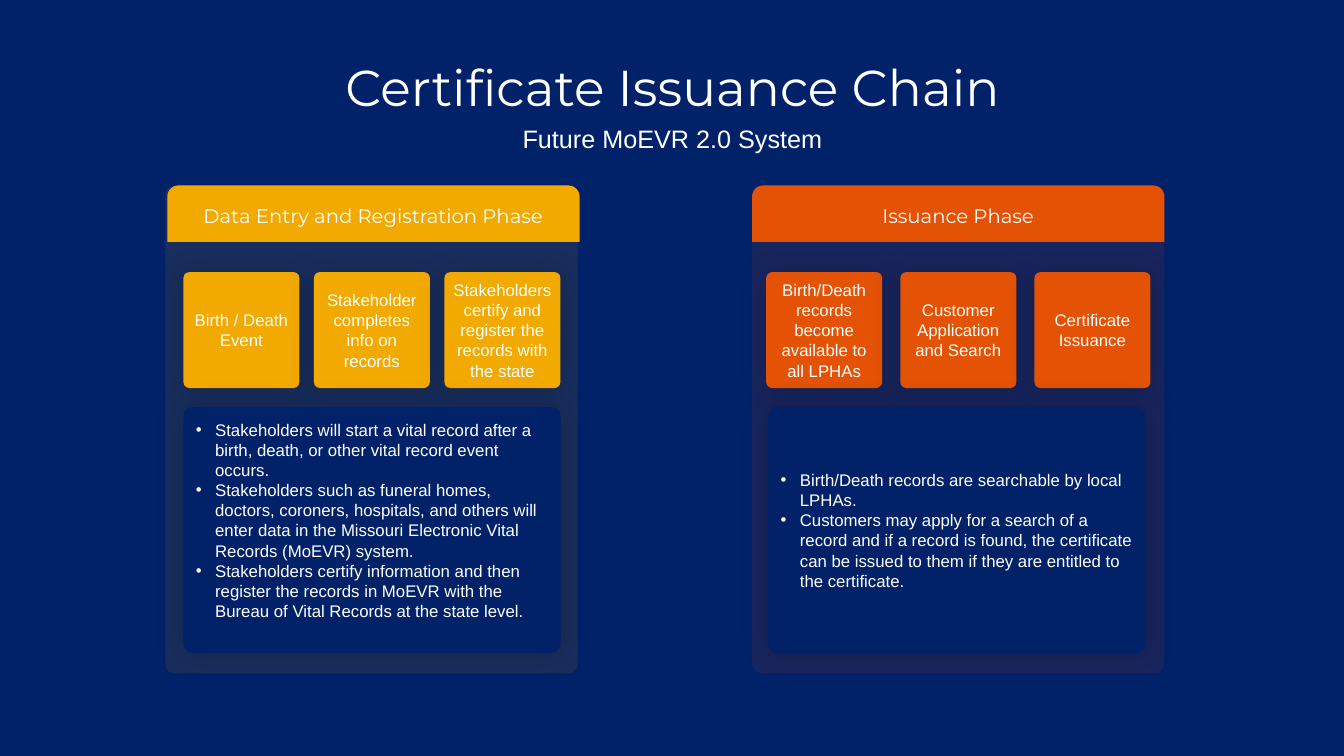
from dataclasses import dataclass
from lxml import etree
from pptx import Presentation, util as u
from pptx.dml.color import RGBColor
from pptx.enum import shapes, text
from pptx.oxml.ns import qn


@dataclass(frozen=True)
class Theme:
    navy: str = "012169"
    gold: str = "F2A900"
    orange: str = "E35205"
    white: str = "FFFFFF"
    black: str = "000000"
    head_font: str = "Montserrat"
    body_font: str = "Arial"
    title: int = 36
    subtitle: int = 18
    header: int = 14
    body: int = 12


T = Theme()
W, H = u.Inches(13.33), u.Inches(7.5)
ROUND = shapes.MSO_SHAPE.ROUNDED_RECTANGLE
TAB = shapes.MSO_SHAPE.ROUND_2_SAME_RECTANGLE

# Rows shared by both phases: top and height in percent of the slide
PANEL_ROW, HEADER_ROW = (24.53, 64.53), (24.53, 7.47)
TILE_ROW, NOTES_ROW = (36, 15.33), (53.87, 32.53)
PANEL_W, TILE_W, NOTES_W = 30.68, 8.63, 28.06


def area(x, y, w, h):
    """Percent of the slide to lengths."""
    return int(W * x / 100), int(H * y / 100), int(W * w / 100), int(H * h / 100)


def sub(parent, tag, **attrs):
    return etree.SubElement(parent, qn(tag), {k: str(v) for k, v in attrs.items()})


def write(sp, paras, *, size, font=T.body_font, align=text.PP_ALIGN.CENTER,
          bullet=False, spacing=None, side=0.1, bottom=0.05):
    tf = sp.text_frame
    tf.word_wrap = True
    tf.vertical_anchor = text.MSO_ANCHOR.MIDDLE
    tf.margin_left = tf.margin_right = u.Inches(side)
    tf.margin_bottom = u.Inches(bottom)
    for i, line in enumerate(paras):
        p = tf.add_paragraph() if i else tf.paragraphs[0]
        p.alignment = align
        p.line_spacing = spacing
        if bullet:
            pPr = p._p.get_or_add_pPr()
            indent = u.Inches(0.19)
            pPr.set("marL", str(indent))
            pPr.set("indent", str(-indent))
            sub(pPr, "a:buFont", typeface=T.body_font)
            sub(pPr, "a:buChar", char="•")
        r = p.add_run()
        r.text = line
        r.font.name, r.font.size = font, u.Pt(size)
        r.font.color.rgb = RGBColor.from_string(T.white)


def card(parent, box, color, radius, kind=ROUND, alpha=None, glow=None):
    """Filled shape; alpha in percent, glow is the shadow's blur in points."""
    sp = parent.shapes.add_shape(kind, *area(*box))
    sp.adjustments[0] = radius
    sp.fill.solid()
    sp.fill.fore_color.rgb = RGBColor.from_string(color)
    sp.line.fill.background()
    sp.shadow.inherit = False
    spPr = sp._element.spPr
    if alpha:
        sub(spPr.find(".//" + qn("a:srgbClr")), "a:alpha", val=alpha * 1000)
    if glow:
        shadow = sub(spPr.find(qn("a:effectLst")), "a:outerShdw",
                     blurRad=u.Pt(glow), algn="ctr", rotWithShape=0)
        sub(sub(shadow, "a:srgbClr", val=T.black), "a:alpha", val=20000)
    return sp


def label(s, box, line, **fmt):
    write(s.shapes.add_textbox(*area(*box)), [line], spacing=0.9, **fmt)


def phase(s, name, color, steps, notes, *, x, header_x, tile_x, pitch, notes_x,
          bottom=0.05):
    g = s.shapes.add_group_shape()
    # Tinted panel and its header
    card(g, (x, PANEL_ROW[0], PANEL_W, PANEL_ROW[1]), color, 0.022, alpha=10)
    head = card(g, (header_x, HEADER_ROW[0], PANEL_W, HEADER_ROW[1]), color, 0.198, TAB)
    write(head, [name], size=T.header, font=T.head_font)
    # Step tiles
    for i, step in enumerate(steps):
        box = tile_x + i * pitch, TILE_ROW[0], TILE_W, TILE_ROW[1]
        write(card(g, box, color, 0.05, glow=20), [step], size=T.body, side=0.07)
    # Notes
    sp = card(g, (notes_x, NOTES_ROW[0], NOTES_W, NOTES_ROW[1]), T.navy, 0.036, glow=22)
    write(sp, notes, size=T.body, align=text.PP_ALIGN.LEFT, bullet=True, bottom=bottom)


def main():
    prs = Presentation()
    prs.slide_width, prs.slide_height = W, H
    s = prs.slides.add_slide(prs.slide_layouts[6])
    s.background.fill.solid()
    s.background.fill.fore_color.rgb = RGBColor.from_string(T.navy)

    # Headings
    label(s, (6.9, 5.47, 86.27, 12.93), "Certificate Issuance Chain",
          size=T.title, font=T.head_font)
    label(s, (12.53, 15.33, 75.02, 6.4), "Future MoEVR 2.0 System", size=T.subtitle)

    # Phases
    phase(s, "Data Entry and Registration Phase", T.gold,
          ["Birth / Death Event",
           "Stakeholder completes info on records",
           "Stakeholders certify and register the records with the state"],
          ["Stakeholders will start a vital record after a birth, death, or other "
           "vital record event occurs.",
           "Stakeholders such as funeral homes, doctors, coroners, hospitals, and "
           "others will enter data in the Missouri Electronic Vital Records (MoEVR) "
           "system.",
           "Stakeholders certify information and then register the records in MoEVR "
           "with the Bureau of Vital Records at the state level."],
          x=12.3, header_x=12.45, tile_x=13.65, pitch=9.71, notes_x=13.65, bottom=0.25)
    phase(s, "Issuance Phase", T.orange,
          ["Birth/Death records become available to all LPHAs",
           "Customer Application and Search",
           "Certificate Issuance"],
          ["Birth/Death records are searchable by local LPHAs.",
           "Customers may apply for a search of a record and if a record is found, "
           "the certificate can be issued to them if they are entitled to the "
           "certificate."],
          x=55.96, header_x=55.96, tile_x=57.01, pitch=9.98, notes_x=57.16)

    prs.save("out.pptx")


if __name__ == "__main__":
    main()
